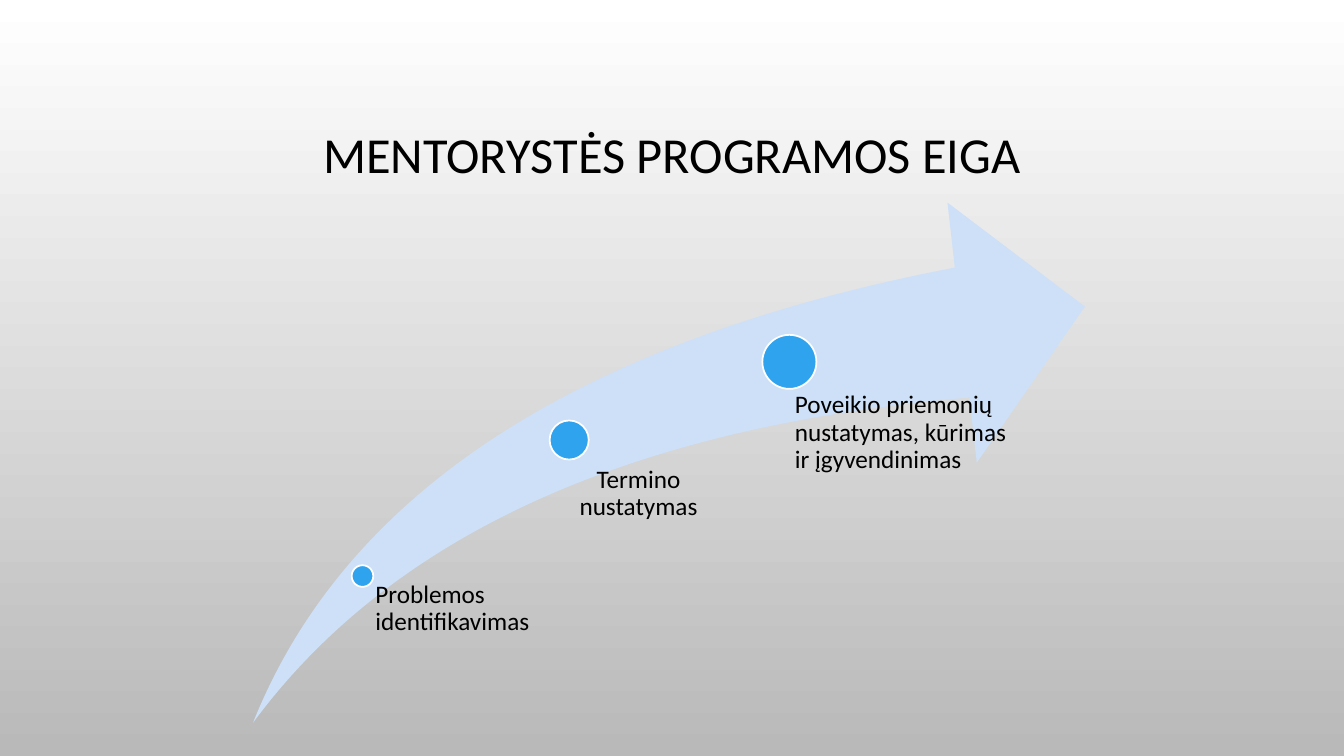
from pptx import Presentation
from pptx import util as u
from pptx.dml.color import RGBColor
from pptx.enum import shapes, text

WIDTH, HEIGHT = 13.33, 7.5
FONT = "Calibri"
BLACK, WHITE, GREY = "000000", "FFFFFF", "B9B9B9"
PALE_BLUE, BLUE = "CDE0F8", "2FA3EE"

TITLE_BOX = (1, 0.68, 11.33, 1.75)
ARROW_BOX = (2.51, 2.01, 8.25, 5.16)

# Percentages of the arrow box: dot centre, dot diameter (of the width), label box
STEPS = [
    ("Problemos identifikavimas", (13.15, 71.8), 2.6,
     (13.33, 72.87, 30.18, 12.02), text.PP_ALIGN.LEFT),
    ("Termino nustatymas", (38, 45.64), 4.7,
     (34.06, 50.78, 22.06, 11.43), text.PP_ALIGN.CENTER),
    ("Poveikio priemonių nustatymas, kūrimas ir įgyvendinimas", (64.48, 30.62), 6.5,
     (61.7, 36.43, 31.15, 17.25), text.PP_ALIGN.LEFT),
]


def color(value):
    return RGBColor.from_string(value)


def inches(box):
    return [u.Inches(length) for length in box]


def within(box, shares):
    """Turn percentages of a box into a left, top, width, height in inches."""
    left, top, width, height = box
    x, y, w, h = (share / 100 for share in shares)
    return left + x * width, top + y * height, w * width, h * height


def write(text_frame, wording, size, alignment):
    text_frame.text = wording
    text_frame.word_wrap = True
    paragraph = text_frame.paragraphs[0]
    paragraph.alignment = alignment
    paragraph.line_spacing = 0.9
    font = paragraph.runs[0].font
    font.name, font.size = FONT, u.Pt(size)
    font.color.rgb = color(BLACK)


def add_filled(slide, kind, box, fill):
    shape = slide.shapes.add_shape(kind, *inches(box))
    shape.shadow.inherit = False
    shape.fill.solid()
    shape.fill.fore_color.rgb = color(fill)
    shape.line.fill.background()
    return shape


def add_background(slide):
    fill = slide.background.fill
    fill.gradient()
    fill.gradient_angle = 270
    for stop, value, position in zip(fill.gradient_stops, (WHITE, GREY), (0, 1)):
        stop.color.rgb = color(value)
        stop.position = position


def add_title(slide, box, wording):
    title = slide.shapes.title
    title.left, title.top, title.width, title.height = inches(box)
    write(title.text_frame, wording, 36, text.PP_ALIGN.CENTER)
    title.text_frame.vertical_anchor = text.MSO_ANCHOR.MIDDLE


def add_step(slide, box, wording, centre, diameter_share, label_shares, alignment):
    x, y, diameter, _ = within(box, (*centre, diameter_share, 0))
    dot_box = (x - diameter / 2, y - diameter / 2, diameter, diameter)
    dot = add_filled(slide, shapes.MSO_SHAPE.OVAL, dot_box, BLUE)
    dot.line.color.rgb = color(WHITE)
    dot.line.width = u.Pt(1.25)

    label = slide.shapes.add_textbox(*inches(within(box, label_shares)))
    frame = label.text_frame
    frame.margin_left = u.Inches(0.53 * diameter)
    frame.margin_top = frame.margin_right = frame.margin_bottom = 0
    write(frame, wording, 18, alignment)


def add_process(slide, box):
    arrow = add_filled(slide, shapes.MSO_SHAPE.SWOOSH_ARROW, box, PALE_BLUE)
    arrow.adjustments[0] = arrow.adjustments[1] = 0.25
    for step in STEPS:
        add_step(slide, box, *step)


def main():
    presentation = Presentation()
    presentation.slide_width = u.Inches(WIDTH)
    presentation.slide_height = u.Inches(HEIGHT)
    slide = presentation.slides.add_slide(presentation.slide_layouts[5])
    add_background(slide)
    add_process(slide, ARROW_BOX)
    add_title(slide, TITLE_BOX, "MENTORYSTĖS PROGRAMOS EIGA")
    presentation.save("out.pptx")


if __name__ == "__main__":
    main()
